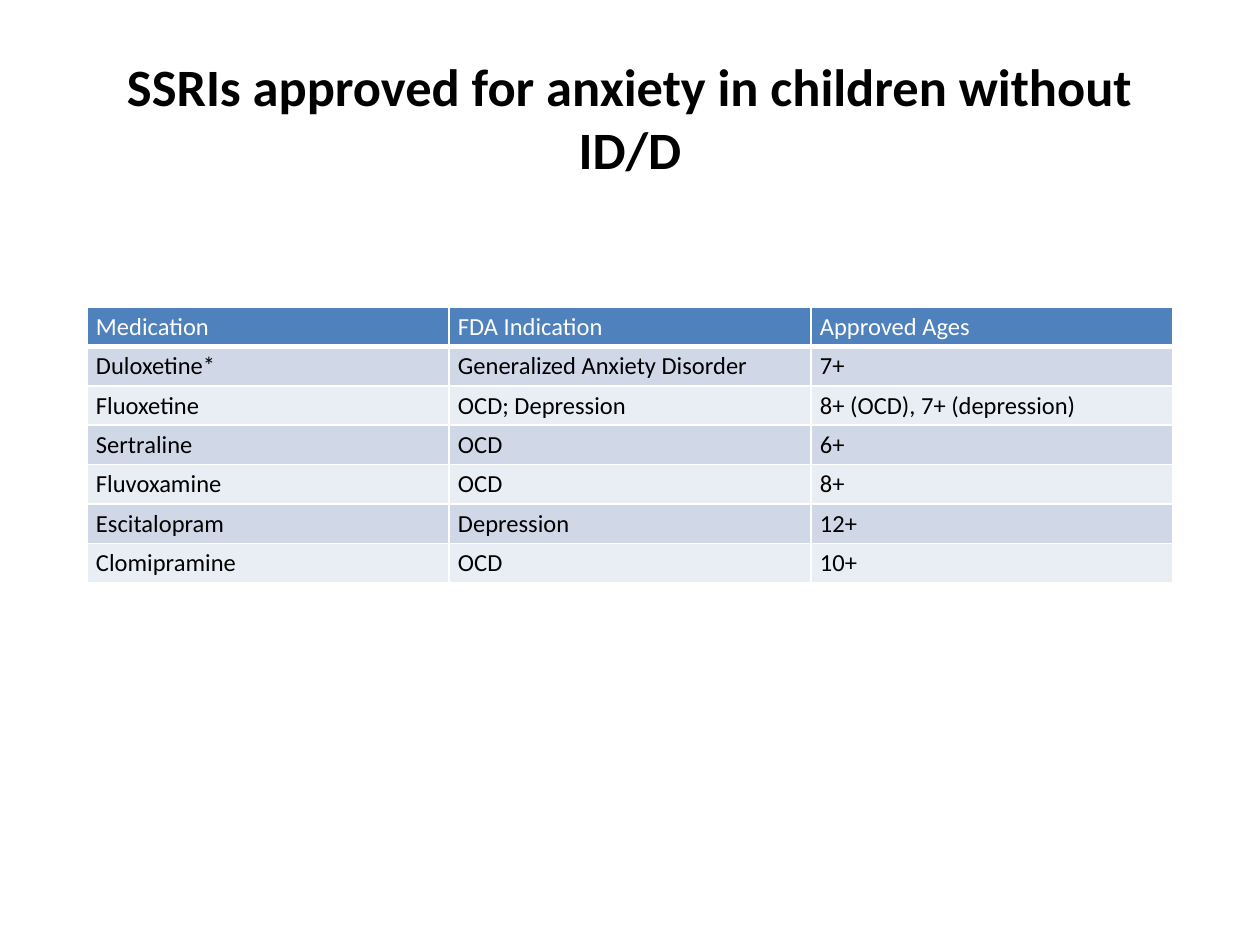
import pptx
import pptx.util
import pptx.dml.color
import pptx.enum.text
import pptx.oxml
from lxml import etree

PX = 914400 // 126
RGB = pptx.dml.color.RGBColor
BLACK = RGB(0x00, 0x00, 0x00)
WHITE = RGB(0xFF, 0xFF, 0xFF)
HEADER = RGB(0x4F, 0x81, 0xBD)
BANDS = [RGB(0xE9, 0xED, 0xF4), RGB(0xD0, 0xD8, 0xE8)]
NS = "http://schemas.openxmlformats.org/drawingml/2006/main"
LEFT, CENTER = pptx.enum.text.PP_ALIGN.LEFT, pptx.enum.text.PP_ALIGN.CENTER
MIDDLE = pptx.enum.text.MSO_ANCHOR.MIDDLE


def write(tf, text, size=14, color=BLACK, bold=False, align=LEFT):
    tf.word_wrap = True
    p = tf.paragraphs[0]
    p.alignment = align
    r = p.add_run()
    r.text = text
    r.font.name = "Calibri"
    r.font.size = pptx.util.Pt(size)
    r.font.bold = bold
    r.font.color.rgb = color


def add_border(cell, side, width):
    tc_pr = cell._tc.get_or_add_tcPr()
    ln = etree.SubElement(tc_pr, f"{{{NS}}}ln{side}", w=str(pptx.util.Pt(width)))
    fill = etree.SubElement(ln, f"{{{NS}}}solidFill")
    etree.SubElement(fill, f"{{{NS}}}srgbClr", val=str(WHITE))


prs = pptx.Presentation()
prs.slide_width = 1260 * PX
prs.slide_height = 945 * PX
s = prs.slides.add_slide(prs.slide_layouts[6])

# Title
sp = s.shapes.add_textbox(63 * PX, 38 * PX, 1134 * PX, 157 * PX)
sp.text_frame.vertical_anchor = MIDDLE
write(sp.text_frame, "SSRIs approved for anxiety in children without ID/D",
      size=30, bold=True, align=CENTER)

# Medication table
rows = [
    ("Medication", "FDA Indication", "Approved Ages"),
    ("Duloxetine*", "Generalized Anxiety Disorder", "7+"),
    ("Fluoxetine", "OCD; Depression", "8+ (OCD), 7+ (depression)"),
    ("Sertraline", "OCD", "6+"),
    ("Fluvoxamine", "OCD", "8+"),
    ("Escitalopram", "Depression", "12+"),
    ("Clomipramine", "OCD", "10+"),
]
table = s.shapes.add_table(len(rows), 3, 87 * PX, 307 * PX,
                           3 * 362 * PX, len(rows) * 39 * PX).table
for column in table.columns:
    column.width = 362 * PX
for i, row in enumerate(rows):
    table.rows[i].height = 39 * PX
    for j, text in enumerate(row):
        cell = table.cell(i, j)
        cell.margin_left = cell.margin_right = 9 * PX
        cell.margin_top = cell.margin_bottom = 5 * PX
        for side in "LRTB":
            add_border(cell, side, 3 if i == 0 and side == "B" else 1)
        cell.fill.solid()
        cell.fill.fore_color.rgb = BANDS[i % 2] if i else HEADER
        write(cell.text_frame, text, color=BLACK if i else WHITE)

prs.save("out.pptx")
